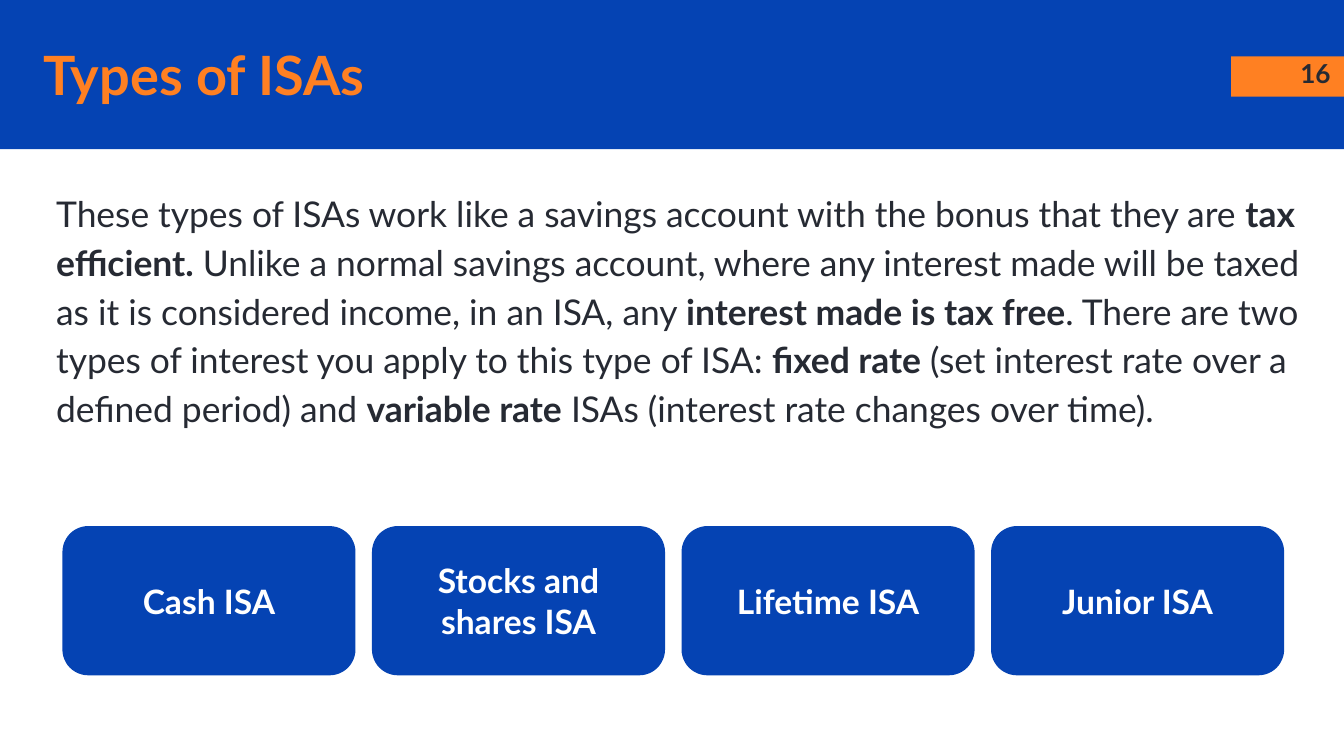
from pptx import Presentation
from pptx import util as u
from pptx.dml.color import RGBColor
from pptx.enum import shapes, text

BLUE = RGBColor(0x05, 0x43, 0xB3)
ORANGE = RGBColor(0xFF, 0x80, 0x22)
DARK = RGBColor(0x26, 0x2A, 0x33)
WHITE = RGBColor(0xFF, 0xFF, 0xFF)

LEFT, CENTER, RIGHT = text.PP_ALIGN.LEFT, text.PP_ALIGN.CENTER, text.PP_ALIGN.RIGHT
TOP, MIDDLE = text.MSO_ANCHOR.TOP, text.MSO_ANCHOR.MIDDLE


def add_block(kind, left, top, width, height, color):
    block = page.shapes.add_shape(
        kind, u.Inches(left), u.Inches(top), u.Inches(width), u.Inches(height))
    block.shadow.inherit = False
    block.fill.solid()
    block.fill.fore_color.rgb = color
    block.line.fill.background()
    return block


def write(box, runs, size, color, align, anchor):
    frame = box.text_frame
    layout = {"word_wrap": True, "auto_size": text.MSO_AUTO_SIZE.NONE,
              "vertical_anchor": anchor}
    for side in ("left", "right", "top", "bottom"):
        layout["margin_" + side] = u.Inches(0.1)
    for name, value in layout.items():
        setattr(frame, name, value)
    para = frame.paragraphs[0]
    para.alignment = align
    for words, bold in runs:
        span = para.add_run()
        span.text = words
        for name, value in {"name": "Lato", "size": u.Pt(size), "bold": bold}.items():
            setattr(span.font, name, value)
        span.font.color.rgb = color
    return para


deck = Presentation()
deck.slide_width = u.Inches(10)
deck.slide_height = u.Inches(10 * 9 / 16)
page = deck.slides.add_slide(deck.slide_layouts[5])

add_block(shapes.MSO_SHAPE.RECTANGLE, 0, 0, 10, 1.11, BLUE)
add_block(shapes.MSO_SHAPE.RECTANGLE, 9.16, 0.42, 0.84, 0.3, ORANGE)

number = page.shapes.add_textbox(
    u.Inches(9.4), u.Inches(0.33), u.Inches(0.6), u.Inches(0.43))
write(number, [("16", True)], 14, DARK, RIGHT, TOP)

title = page.shapes.title
title.element.getparent().append(title.element)
place = {"left": 0.22, "top": 0.27, "width": 8.47, "height": 0.56}
for name, value in place.items():
    setattr(title, name, u.Inches(value))
write(title, [("Types of ISAs", True)], 29, ORANGE, LEFT, MIDDLE)

body = page.shapes.add_textbox(
    u.Inches(0.32), u.Inches(1.28), u.Inches(9.54), u.Inches(2.28))
body_runs = [
    ("These types of ISAs work like a savings account with the bonus that they are ", False),
    ("tax efficient.", True),
    (" Unlike a normal savings account, where any interest made will be taxed as it is "
     "considered income, in an ISA, any ", False),
    ("interest made is tax free", True),
    (". There are two types of interest you apply to this type of ISA: ", False),
    ("fixed rate", True),
    (" (set interest rate over a defined period) and ", False),
    ("variable rate", True),
    (" ISAs (interest rate changes over time).", False),
]
para = write(body, body_runs, 19, DARK, LEFT, TOP)
para.line_spacing = 1.15

isa_types = ["Cash ISA", "Stocks and shares ISA", "Lifetime ISA", "Junior ISA"]
first_left, last_left = 0.47, 7.38
column_step = (last_left - first_left) / (len(isa_types) - 1)
for column, label in enumerate(isa_types):
    card = add_block(shapes.MSO_SHAPE.ROUNDED_RECTANGLE,
                     first_left + column * column_step, 3.92, 2.17, 1.1, BLUE)
    card.adjustments[0] = 0.17
    card.line.color.rgb = BLUE
    card.line.width = u.Pt(0.75)
    write(card, [(label, True)], 18, WHITE, CENTER, MIDDLE)

deck.save("out.pptx")
